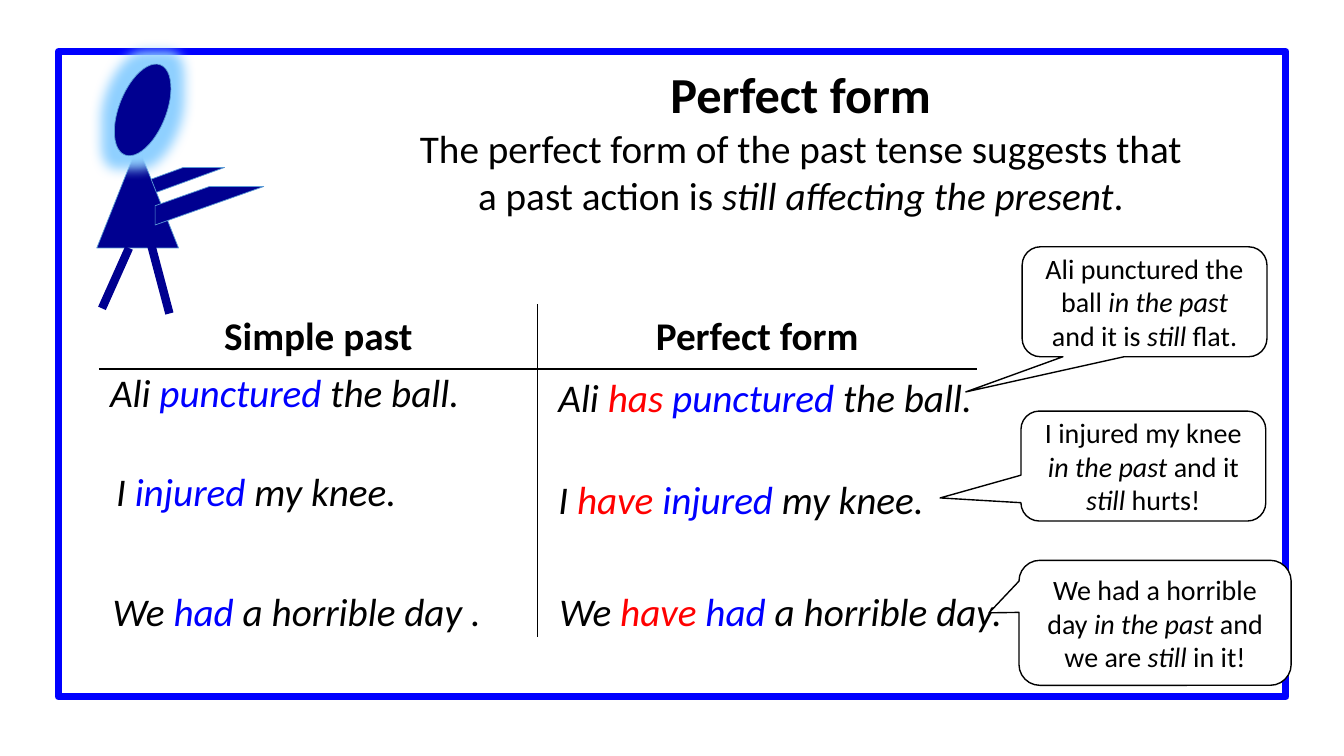
"""Builds a slide that contrasts the simple past with the perfect form."""
from lxml import etree
from pptx import Presentation
from pptx import util as u
from pptx.dml import color
from pptx.enum import shapes, text
from pptx.oxml import ns

COLOURS = {"black": "000000", "white": "FFFFFF", "blue": "0000FF", "red": "FF0000",
           "navy": "000090", "outline": "5B9BD5", "glow": "8FD0FF"}


class SlideBuilder:
    """Holds the style and the current slide."""

    def __init__(self, presentation, font="Calibri"):
        self.slide = presentation.slides.add_slide(presentation.slide_layouts[6])
        self.shapes = self.slide.shapes
        self.font = font

    def colour(self, name):
        return color.RGBColor.from_string(COLOURS[name])

    def add_runs(self, paragraph, runs, size, bold=False, spacing=None):
        paragraph.alignment = text.PP_ALIGN.CENTER
        if spacing:
            paragraph.line_spacing = spacing
        for words, colour, italic in runs:
            run = paragraph.add_run()
            run.text = words
            run.font.name, run.font.size = self.font, u.Pt(size)
            run.font.bold, run.font.italic = bold, italic
            run.font.color.rgb = self.colour(colour)

    def text_box(self, box, wrap=False):
        shape = self.shapes.add_textbox(*map(u.Cm, box))
        shape.text_frame.word_wrap = wrap
        return shape.text_frame

    def shape(self, kind, box, fill, line, width, rotation=0):
        shape = self.shapes.add_shape(kind, *map(u.Cm, box))
        shape.shadow.inherit = False
        if fill:
            shape.fill.solid()
            shape.fill.fore_color.rgb = self.colour(fill)
        else:
            shape.fill.background()
        shape.line.color.rgb = self.colour(line)
        shape.line.width = u.Pt(width)
        shape.rotation = rotation
        return shape

    def glow(self, shape, colour, radius):
        effects = shape._element.spPr.find(ns.qn("a:effectLst"))
        glow = etree.SubElement(effects, ns.qn("a:glow"), rad=str(u.Pt(radius)))
        etree.SubElement(glow, ns.qn("a:srgbClr"), val=COLOURS[colour])

    def line(self, start, end, colour, width):
        connector = self.shapes.add_connector(
            shapes.MSO_CONNECTOR.STRAIGHT, *map(u.Cm, start + end))
        connector.line.color.rgb = self.colour(colour)
        connector.line.width = u.Pt(width)
        etree.SubElement(connector._element.spPr, ns.qn("a:effectLst"))

    def callout(self, box, tail, runs):
        shape = self.shape(shapes.MSO_SHAPE.ROUNDED_RECTANGULAR_CALLOUT, box,
                           "white", "black", 1)
        shape.adjustments[0], shape.adjustments[1] = tail
        frame = shape.text_frame
        frame.word_wrap = True
        frame.vertical_anchor = text.MSO_ANCHOR.MIDDLE
        self.add_runs(frame.paragraphs[0], runs, 20)

    def border(self, cell, sides):
        properties = cell._tc.get_or_add_tcPr()
        for side in "LRTB":
            line = etree.SubElement(properties, ns.qn(f"a:ln{side}"), w=str(u.Pt(1)))
            if side in sides:
                fill = etree.SubElement(line, ns.qn("a:solidFill"))
                etree.SubElement(fill, ns.qn("a:srgbClr"), val=COLOURS["black"])
            else:
                etree.SubElement(line, ns.qn("a:noFill"))

    def table(self, box, heights, headings):
        table = self.shapes.add_table(2, 2, *map(u.Cm, box)).table
        table.first_row = table.horz_banding = False
        for row, height in zip(table.rows, heights):
            row.height = u.Cm(height)
        for row, sides in enumerate(("B", "T")):
            for column, inner in enumerate("RL"):
                cell = table.cell(row, column)
                self.border(cell, sides + inner)
                cell.fill.background()
        for column, heading in enumerate(headings):
            cell = table.cell(0, column)
            cell.vertical_anchor = text.MSO_ANCHOR.MIDDLE
            cell.margin_top = cell.margin_bottom = 0
            self.add_runs(cell.text_frame.paragraphs[0], [(heading, "black", False)], 28, True)

    def walking_figure(self):
        self.shapes = self.slide.shapes.add_group_shape().shapes
        kinds = shapes.MSO_SHAPE
        style = ("navy", "outline", 0.5)
        self.shape(kinds.DIAGONAL_STRIPE, (3.58, 4.22, 2.08, 0.76), *style)
        self.shape(kinds.ISOSCELES_TRIANGLE, (2.44, 3.66, 2.06, 2.59), *style)
        head = self.shape(kinds.OVAL, (3, 1.55, 1.19, 2.44), *style, rotation=21.6)
        self.glow(head, "glow", 18)
        self.shape(kinds.DIAGONAL_STRIPE, (3.91, 4.7, 2.74, 0.97), *style)
        self.line((3.25, 6.25), (2.57, 7.77), "navy", 6)
        self.line((3.81, 6.17), (4.27, 7.9), "navy", 6)
        self.shapes = self.slide.shapes


def main():
    presentation = Presentation()
    presentation.slide_width, presentation.slide_height = u.Cm(33.87), u.Cm(19.05)
    builder = SlideBuilder(presentation)

    intro = builder.text_box((8.46, 0.71, 23.44, 4.95), wrap=True)
    builder.add_runs(intro.paragraphs[0], [("Perfect form", "black", False)], 36, True, 1.5)
    for runs in (
        [("The perfect form of the past tense suggests that", "black", False)],
        [("a past action is ", "black", False),
         ("still affecting the present", "black", True), (".", "black", False)],
    ):
        builder.add_runs(intro.add_paragraph(), runs, 28)

    builder.shape(shapes.MSO_SHAPE.RECTANGLE, (1.47, 1.3, 30.94, 16.26), None, "blue", 5)
    builder.table((2.49, 7.67, 22.12, 8.39), (1.63, 6.76), ("Simple past", "Perfect form"))

    sentences = (
        ((2.03, 8.56, 10.29), "Ali ", "", "punctured", " the ball."),
        ((2.57, 11.07, 7.77), "I ", "", "injured", " my knee."),
        ((2.44, 14.07, 10.08), "We ", "", "had", " a horrible day ."),
        ((13.72, 8.69, 11.13), "Ali ", "has ", "punctured", " the ball."),
        ((13.72, 11.25, 9.91), "I ", "have ", "injured", " my knee."),
        ((13.72, 14.07, 11.91), "We ", "have ", "had", " a horrible day."),
    )
    for place, *parts in sentences:
        runs = [(part, colour, True) for part, colour
                in zip(parts, ("black", "red", "blue", "black")) if part]
        frame = builder.text_box((*place, 2.06))
        builder.add_runs(frame.paragraphs[0], runs, 28, spacing=1.5)

    callouts = (
        ((25.76, 6.22, 6.17, 2.77), (-0.73, 0.82),
         "Ali punctured the ball ", "and it is ", " flat."),
        ((25.73, 10.36, 6.17, 2.77), (-0.83, 0.29),
         "I injured my knee ", "and it ", " hurts!"),
        ((25.68, 14.12, 6.86, 3.15), (-0.61, -0.08),
         "We had a horrible day ", "and we are ", " in it!"),
    )
    for box, tail, action, link, result in callouts:
        parts = (action, "in the past ", link, "still", result)
        runs = [(part, "black", index % 2 == 1) for index, part in enumerate(parts)]
        builder.callout(box, tail, runs)

    builder.walking_figure()
    presentation.save("out.pptx")


if __name__ == "__main__":
    main()
